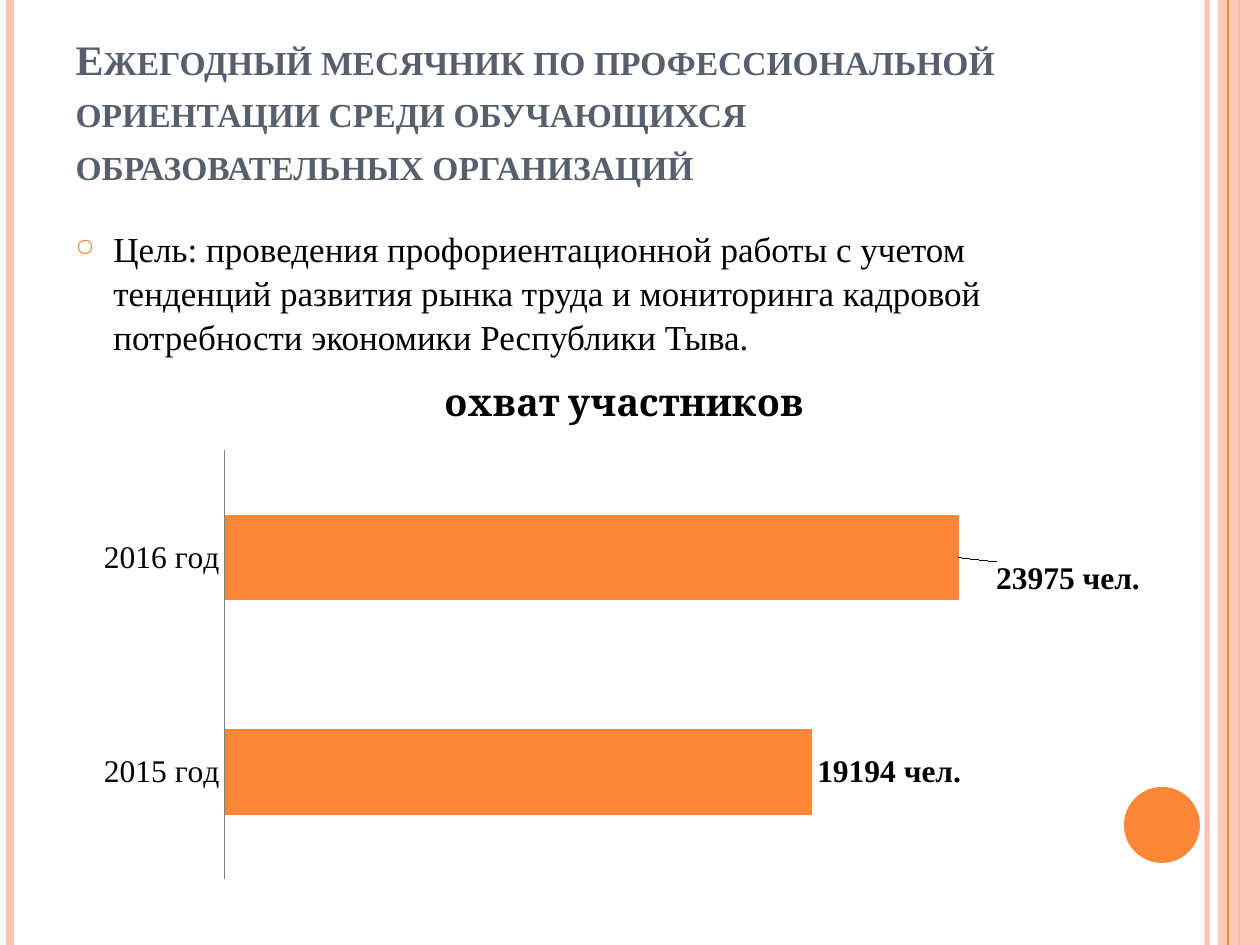
from dataclasses import dataclass

from lxml import etree
from pptx import Presentation
from pptx.chart.data import CategoryChartData
from pptx.dml.color import RGBColor
from pptx.enum.chart import XL_CHART_TYPE as ChartType
from pptx.enum.chart import XL_LABEL_POSITION as LabelPosition
from pptx.enum.chart import XL_TICK_LABEL_POSITION as TickLabels
from pptx.enum.chart import XL_TICK_MARK as TickMark
from pptx.enum.shapes import MSO_CONNECTOR as Connector
from pptx.enum.shapes import MSO_SHAPE as Shape
from pptx.enum.text import MSO_ANCHOR as Anchor
from pptx.enum.text import MSO_AUTO_SIZE as AutoSize
from pptx.enum.text import PP_ALIGN as Align
from pptx.oxml import parse_xml
from pptx.oxml.ns import nsdecls, qn
from pptx.util import Emu, Pt

PX = 914400 // 126
WIDTH, HEIGHT = 1260, 945


@dataclass(frozen=True)
class Theme:
    accent: str = "FE8637"
    pale: str = "FEC3AE"
    heading: str = "575F6D"
    text: str = "000000"
    axis: str = "808080"
    font: str = "Times New Roman"
    chart_font: str = "Cambria"
    title_size: float = 24
    body_size: float = 20
    chart_size: float = 18
    chart_title_size: float = 21.6
    line_spacing: float = 1.04


class SlideBuilder:
    def __init__(self, presentation, theme):
        self.theme = theme
        self.slide = presentation.slides.add_slide(presentation.slide_layouts[5])
        self.shapes = self.slide.shapes

    def box(self, *lengths):
        return [Emu(length * PX) for length in lengths]

    def style(self, font, size, color, bold=False, name=None):
        font.name = name or self.theme.font
        font.size = Pt(size)
        font.bold = bold
        font.color.rgb = RGBColor.from_string(color)

    def paint(self, fill, color, opacity=100):
        fill.solid()
        fill.fore_color.rgb = RGBColor.from_string(color)
        if opacity < 100:
            for element in fill._xPr.iter(qn("a:srgbClr")):
                alpha = etree.SubElement(element, qn("a:alpha"))
                alpha.set("val", str(opacity * 1000))

    def vertical_line(self, x, color, weight, opacity=100):
        line = self.shapes.add_connector(Connector.STRAIGHT, *self.box(x, 0, x, HEIGHT))
        line.line.width = Pt(weight)
        self.paint(line.line.fill, color, opacity)
        etree.SubElement(line._element.spPr, qn("a:effectLst"))

    def solid(self, kind, bounds, color, opacity=100):
        shape = self.shapes.add_shape(kind, *self.box(*bounds))
        shape.shadow.inherit = False
        shape.line.fill.background()
        self.paint(shape.fill, color, opacity)

    def title(self, text, bounds):
        title = self.shapes.title
        title.left, title.top, title.width, title.height = self.box(*bounds)
        frame = title.text_frame
        frame.text = text
        frame.word_wrap = True
        frame.auto_size = AutoSize.NONE
        frame.vertical_anchor = Anchor.BOTTOM
        paragraph = frame.paragraphs[0]
        paragraph.alignment = Align.LEFT
        paragraph.line_spacing = self.theme.line_spacing
        self.style(paragraph.font, self.theme.title_size, self.theme.heading, bold=True)
        paragraph._p.pPr.find(qn("a:defRPr")).set("cap", "small")
        paragraph.runs[0].font._element.set("cap", "small")

    def bullet(self, text, bounds, indent):
        frame = self.shapes.add_textbox(*self.box(*bounds)).text_frame
        frame.word_wrap = True
        frame.text = text
        paragraph = frame.paragraphs[0]
        paragraph.space_before = Pt(6)
        paragraph.line_spacing = self.theme.line_spacing
        self.style(paragraph.font, self.theme.body_size, self.theme.text)
        properties = paragraph._p.get_or_add_pPr()
        properties.set("marL", str(indent * PX))
        properties.set("indent", str(-indent * PX))
        defaults = properties.find(qn("a:defRPr"))
        for xml in (
            f'<a:buClr {nsdecls("a")}><a:srgbClr val="{self.theme.accent}"/></a:buClr>',
            f'<a:buSzPct {nsdecls("a")} val="70000"/>',
            f'<a:buChar {nsdecls("a")} char="○"/>',
        ):
            defaults.addprevious(parse_xml(xml))

    def manual_layout(self, **values):
        """Chart layout; the keys are the names of c:manualLayout children."""
        items = "".join(f'<c:{key} val="{value}"/>' for key, value in values.items())
        return parse_xml(
            f'<c:layout {nsdecls("c")}><c:manualLayout>{items}</c:manualLayout></c:layout>'
        )

    def bar_chart(self, name, values, bounds, plot_layout, label_offsets):
        theme = self.theme
        data = CategoryChartData()
        data.categories = list(values)
        data.add_series(name, list(values.values()))
        chart = self.shapes.add_chart(
            ChartType.BAR_CLUSTERED, *self.box(*bounds), data
        ).chart
        self.style(chart.font, theme.chart_size, theme.text, name=theme.chart_font)
        chart.has_legend = False
        chart.has_title = True
        heading = chart.chart_title.text_frame
        heading.text = name
        self.style(heading.paragraphs[0].runs[0].font, theme.chart_title_size,
                   theme.text, bold=True, name=theme.chart_font)
        chart.chart_title.include_in_layout = False

        # Axes
        category_axis, value_axis = chart.category_axis, chart.value_axis
        category_axis.major_tick_mark = TickMark.NONE
        category_axis.tick_label_position = TickLabels.NEXT_TO_AXIS
        category_axis.format.line.width = Pt(0.75)
        self.paint(category_axis.format.line.fill, theme.axis)
        self.style(category_axis.tick_labels.font, theme.chart_size, theme.text)
        value_axis.minimum_scale, value_axis.maximum_scale = 0, 30000
        value_axis.has_major_gridlines = False
        value_axis.visible = False

        # Bars and their labels
        plot = chart.plots[0]
        plot.gap_width = 150
        plot.vary_by_categories = False
        series = plot.series[0]
        self.paint(series.format.fill, theme.accent)
        labels = series.data_labels
        labels.show_value = True
        labels.position = LabelPosition.OUTSIDE_END
        self.style(labels.font, theme.chart_size, theme.text, bold=True)
        for index, value in enumerate(values.values()):
            label = series.points[index].data_label
            label.text_frame.text = f"{value} чел."
            run = label.text_frame.paragraphs[0].runs[0]
            self.style(run.font, theme.chart_size, theme.text, bold=True)
            label.position = LabelPosition.OUTSIDE_END
        for index, (x, y) in label_offsets.items():
            number = labels._element.findall(qn("c:dLbl"))[index].find(qn("c:idx"))
            number.addnext(self.manual_layout(x=x, y=y))

        # Plot area
        area = chart._chartSpace.chart.plotArea
        for old_layout in area.findall(qn("c:layout")):
            area.remove(old_layout)
        area.insert(0, self.manual_layout(
            layoutTarget="inner", xMode="edge", yMode="edge", **plot_layout))


def main():
    presentation = Presentation()
    presentation.slide_width = Emu(WIDTH * PX)
    presentation.slide_height = Emu(HEIGHT * PX)
    theme = Theme()
    builder = SlideBuilder(presentation, theme)

    # Side stripes and corner circle
    builder.vertical_line(1207, theme.pale, 3, 93)
    builder.vertical_line(10, theme.pale, 4.5)
    builder.vertical_line(1239, theme.accent, 1.5)
    builder.solid(Shape.RECTANGLE, (1218, 0, 42, HEIGHT), theme.pale, 87)
    builder.vertical_line(1228, theme.accent, 0.75)
    builder.solid(Shape.OVAL, (1124, 787, 76, 76), theme.accent)

    # Title and goal
    builder.title(
        "Ежегодный месячник по профессиональной ориентации среди обучающихся "
        "образовательных организаций", (63, 38, 1029, 157))
    builder.bullet(
        "Цель: проведения профориентационной работы с учетом тенденций развития "
        "рынка труда и мониторинга кадровой потребности экономики Республики Тыва.",
        (63, 220, 1029, 672), indent=38)

    # Participants by year
    builder.bar_chart(
        "охват участников", {"2015 год": 19194, "2016 год": 23975},
        (84, 354, 1081, 536),
        plot_layout={"x": 0.13, "y": 0.18, "w": 0.85, "h": 0.8},
        label_offsets={1: (0.03, 0.04)})

    presentation.save("out.pptx")


if __name__ == "__main__":
    main()
